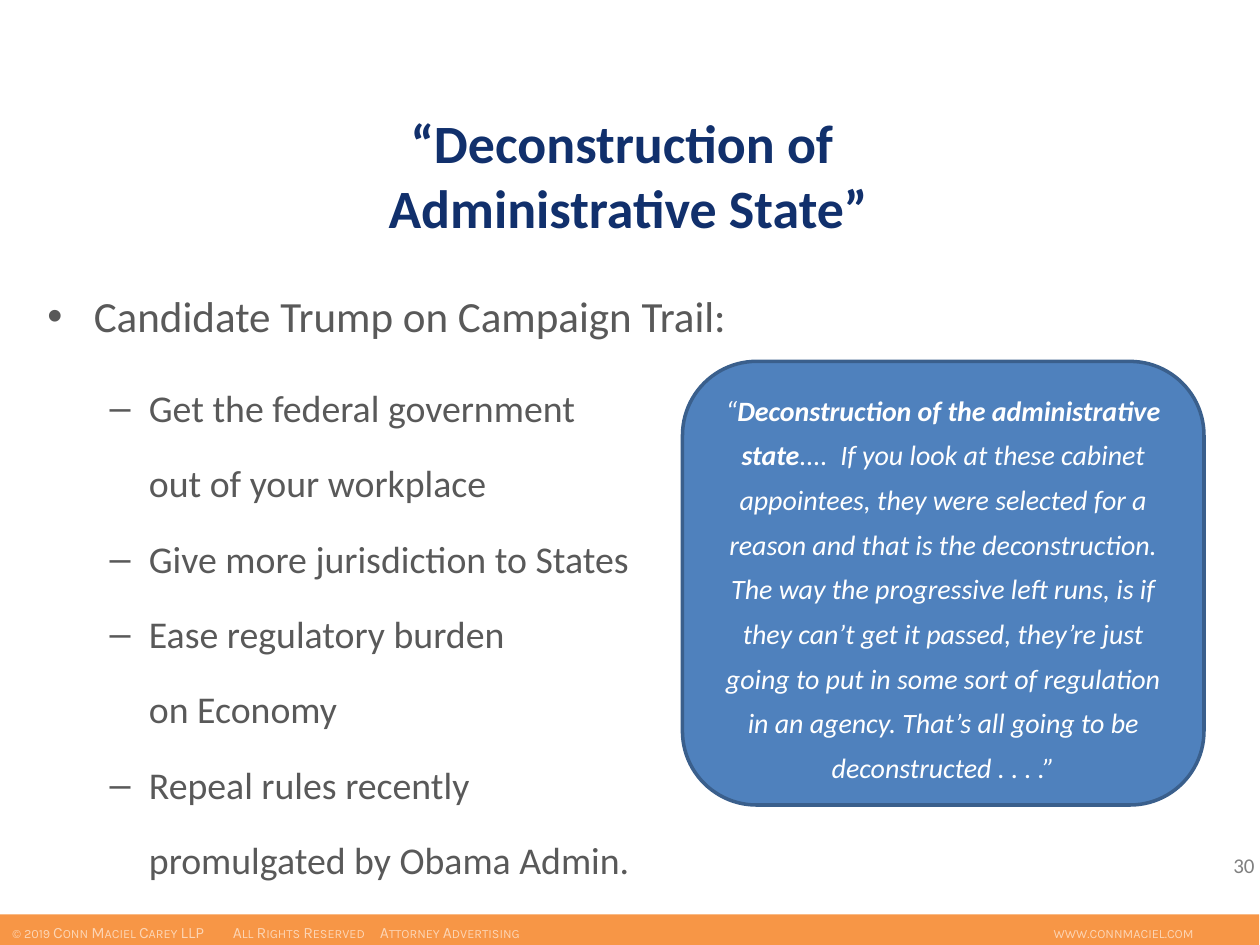
from lxml import etree
from pptx import Presentation
from pptx.dml.color import RGBColor
from pptx.enum import shapes, text
from pptx.oxml import ns
from pptx.util import Pt

NAVY = RGBColor(0x11, 0x30, 0x6C)
GRAY = RGBColor(0x59, 0x59, 0x59)
PALE = RGBColor(0x80, 0x80, 0x80)
BLUE = RGBColor(0x4F, 0x81, 0xBD)
EDGE = RGBColor(0x3A, 0x5F, 0x8C)
ORANGE = RGBColor(0xF7, 0x96, 0x46)
PEACH = RGBColor(0xFC, 0xD5, 0xB5)
WHITE = RGBColor(0xFF, 0xFF, 0xFF)
ALIGN = text.PP_ALIGN
MID = text.MSO_ANCHOR.MIDDLE

# Bullet mark (empty for a continued line), and the lines under the heading
POINTS = [
    ("–", "Get the federal government"),
    ("", "out of your workplace"),
    ("–", "Give more jurisdiction to States"),
    ("–", "Ease regulatory burden"),
    ("", "on Economy"),
    ("–", "Repeal rules recently"),
    ("", "promulgated by Obama Admin."),
]
QUOTE = [
    ("“", False),
    ("Deconstruction of the administrative state", True),
    ("....  If you look at these cabinet appointees, they were selected for a "
     "reason and that is the deconstruction. The way the progressive left runs, "
     "is if they can’t get it passed, they’re just going to put in some sort of "
     "regulation in an agency. That’s all going to be deconstructed . . . .”", False),
]
FOOT = ["© 2019 Conn Maciel Carey LLP", "All Rights Reserved",
        "Attorney Advertising", "www.connmaciel.com"]
TABS = [126, 210, 595]


def pts(box):
    return [Pt(n) for n in box]


def style(para, size, color, face="Calibri"):
    font = para.font
    font.name, font.size, font.color.rgb = face, Pt(size), color
    return font


def bullet(para, mark, left, hang):
    props = para._p.get_or_add_pPr()
    props.set("marL", str(Pt(left)))
    props.set("indent", str(Pt(-hang if mark else 0)))
    if mark:
        tint = etree.SubElement(props, ns.qn("a:buClr"))
        etree.SubElement(tint, ns.qn("a:srgbClr"), val=str(GRAY))
        etree.SubElement(props, ns.qn("a:buFont"), typeface="Arial")
        etree.SubElement(props, ns.qn("a:buChar"), char=mark)
    else:
        etree.SubElement(props, ns.qn("a:buNone"))


def panel(slide, kind, box, fill):
    shape = slide.shapes.add_shape(kind, *pts(box))
    shape.shadow.inherit = False
    shape.fill.solid()
    shape.fill.fore_color.rgb = fill
    shape.text_frame.word_wrap = True
    return shape


def add_title(slide, box):
    title = slide.shapes.title
    title.left, title.top, title.width, title.height = pts(box)
    frame = title.text_frame
    frame.text = "“Deconstruction of \vAdministrative State”"
    frame.vertical_anchor = MID
    frame.auto_size = text.MSO_AUTO_SIZE.NONE
    para = frame.paragraphs[0]
    para.alignment = ALIGN.CENTER
    style(para, 30.8, NAVY).bold = True


def add_points(slide, box):
    frame = slide.shapes.add_textbox(*pts(box)).text_frame
    frame.word_wrap = True
    head = frame.paragraphs[0]
    head.text = "Candidate Trump on Campaign Trail:"
    bullet(head, "•", 27, 26.5)
    head.space_after = Pt(13.5)
    style(head, 24.6, GRAY)
    for mark, line in POINTS:
        para = frame.add_paragraph()
        para.text = line
        para.level = 1 if mark else 0
        bullet(para, mark, 58.5, 22.5)
        para.line_spacing = 1.2
        para.space_before = para.space_after = Pt(6)
        style(para, 21.6, GRAY)


def add_quote(slide, box):
    shape = panel(slide, shapes.MSO_SHAPE.ROUNDED_RECTANGLE, box, BLUE)
    shape.line.color.rgb = EDGE
    shape.line.width = Pt(2)
    shape.text_frame.vertical_anchor = MID
    para = shape.text_frame.paragraphs[0]
    para.alignment = ALIGN.CENTER
    para.line_spacing = Pt(25.5)
    style(para, 16, WHITE).italic = True
    for words, bold in QUOTE:
        run = para.add_run()
        run.text = words
        run.font.bold = bold


def add_number(slide, box):
    frame = slide.shapes.add_textbox(*pts(box)).text_frame
    frame.word_wrap = True
    frame.vertical_anchor = MID
    para = frame.paragraphs[0]
    para.text = "30"
    para.alignment = ALIGN.RIGHT
    style(para, 12, PALE)


def add_footer(slide, box):
    shape = panel(slide, shapes.MSO_SHAPE.RECTANGLE, box, ORANGE)
    shape.line.fill.background()
    shape.text_frame.vertical_anchor = text.MSO_ANCHOR.TOP
    para = shape.text_frame.paragraphs[0]
    para.text = "\t".join(FOOT)
    para.alignment = ALIGN.LEFT
    para.line_spacing = Pt(12)
    props = para._p.get_or_add_pPr()
    stops = etree.SubElement(props, ns.qn("a:tabLst"))
    for stop in TABS:
        etree.SubElement(stops, ns.qn("a:tab"), pos=str(Pt(stop)), algn="l")
    style(para, 9, PEACH, "Karla")
    props.find(ns.qn("a:defRPr")).set("cap", "small")


def main():
    deck = Presentation()
    deck.slide_width, deck.slide_height = Pt(720), Pt(540)
    slide = deck.slides.add_slide(deck.slide_layouts[5])
    add_number(slide, (556, 480, 168, 29))
    add_points(slide, (19.5, 162, 646, 312))
    add_title(slide, (53, 60.5, 612, 78))
    add_quote(slide, (390, 206.5, 298, 253.5))
    add_footer(slide, (0, 522.5, 719.5, 18.5))
    deck.save("out.pptx")


if __name__ == "__main__":
    main()
